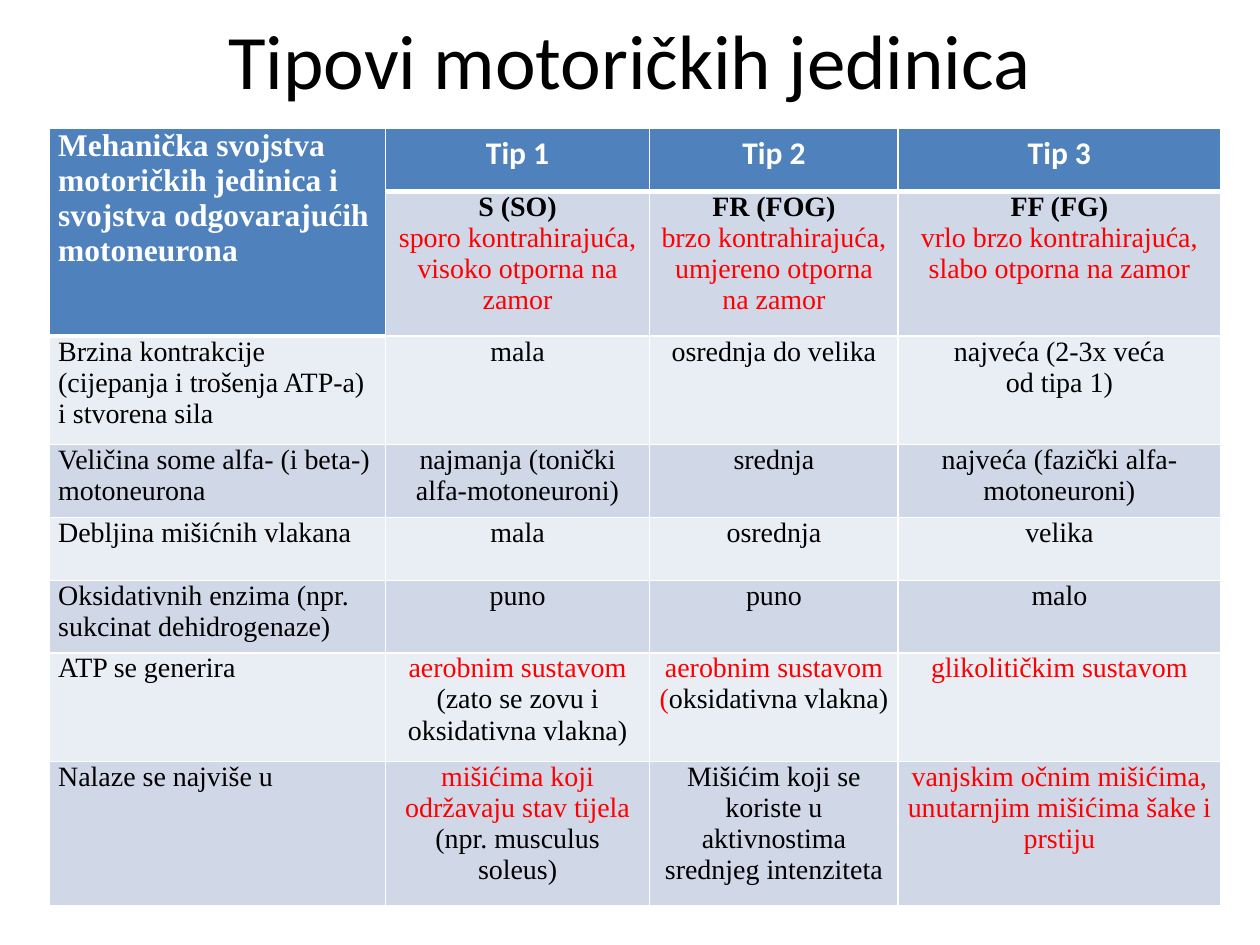
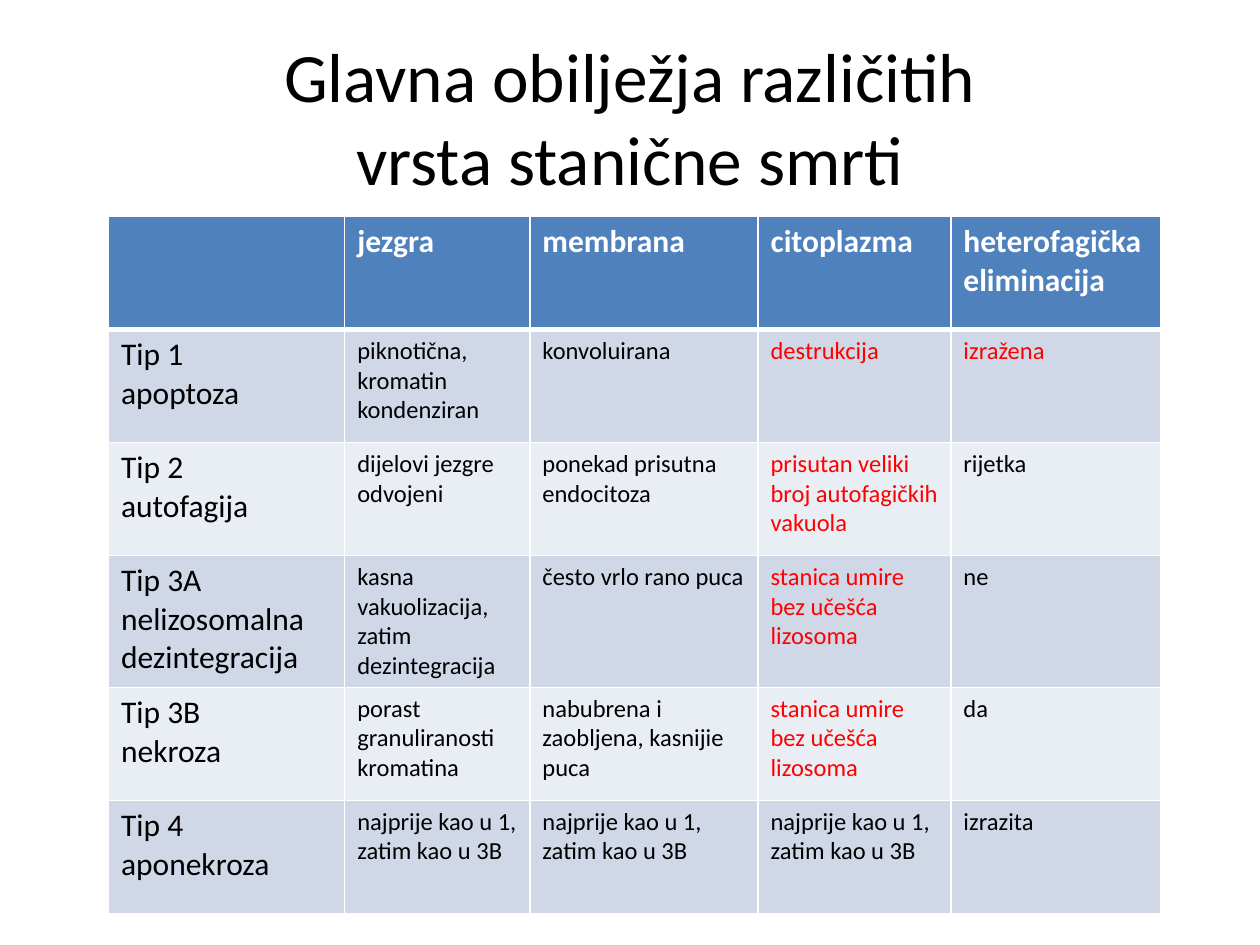
from dataclasses import dataclass

from lxml.etree import SubElement, Element
from pptx import Presentation
from pptx.dml.color import RGBColor
from pptx.enum.text import MSO_ANCHOR, MSO_AUTO_SIZE, PP_ALIGN as Align
from pptx.oxml.ns import qn
from pptx.util import Pt

# Shared look
HEADER, BAND_DARK, BAND_LIGHT = "4F81BD", "D0D8E8", "E9EDF4"
WHITE, BLACK, RED = "FFFFFF", "000000", "FF0000"
SANS, SERIF = "Calibri", "Times New Roman"
THIN, THICK = 1, 3
TITLE_ONLY = 5
TITLE_LEFT, TITLE_WIDTH, TITLE_HEIGHT = 36, 648, 90


@dataclass(frozen=True)
class CellStyle:
    size: float
    font: str = SANS
    color: str = BLACK
    bold: bool = False
    align: Align = Align.LEFT
    margins: tuple[float, float] = (7.2, 3.6)  # sides, top and bottom


@dataclass(frozen=True)
class TableSlide:
    title: str
    title_top: float
    title_size: float
    left: float
    top: float
    columns: list[float]
    heights: list[float]
    rows: list[list[str]]
    corner: CellStyle  # top left cell
    header: CellStyle
    label: CellStyle  # first column
    body: CellStyle
    corner_span: int = 1


def rgb(color: str) -> RGBColor:
    return RGBColor.from_string(color)


def write(frame, text: str, *, size: float, font: str, color: str,
          bold: bool = False, align: Align = Align.LEFT, breaks: bool = False) -> None:
    """Each line is a paragraph (or a line break); *line is bold, |part| is red."""
    paragraph = frame.paragraphs[0]
    for number, line in enumerate(text.split("\n")):
        if number and breaks:
            paragraph.add_line_break()
        elif number:
            paragraph = frame.add_paragraph()
        paragraph.alignment = align
        strong = bold or line.startswith("*")
        for position, part in enumerate(line.removeprefix("*").split("|")):
            if not part:
                continue
            run = paragraph.add_run()
            run.text = part
            run.font.size, run.font.name, run.font.bold = Pt(size), font, strong
            run.font.color.rgb = rgb(RED if position % 2 else color)


def set_borders(cell, top: float, bottom: float) -> None:
    properties = cell._tc.get_or_add_tcPr()
    widths = {"a:lnL": THIN, "a:lnR": THIN, "a:lnT": top, "a:lnB": bottom}
    for position, (side, width) in enumerate(widths.items()):
        line = Element(qn(side), w=str(Pt(width)))
        fill = SubElement(line, qn("a:solidFill"))
        SubElement(fill, qn("a:srgbClr"), val=WHITE)
        properties.insert(position, line)


def add_title(slide, content: TableSlide) -> None:
    title = slide.shapes.title
    title.left, title.top = Pt(TITLE_LEFT), Pt(content.title_top)
    title.width, title.height = Pt(TITLE_WIDTH), Pt(TITLE_HEIGHT)
    frame = title.text_frame
    frame.auto_size, frame.word_wrap = MSO_AUTO_SIZE.NONE, True
    frame.vertical_anchor = MSO_ANCHOR.MIDDLE
    write(frame, content.title, size=content.title_size, font=SANS,
          color=BLACK, align=Align.CENTER, breaks=True)


def style_of(content: TableSlide, row: int, column: int) -> CellStyle:
    if row == 0:
        return content.header if column else content.corner
    return content.body if column else content.label


def add_table(slide, content: TableSlide) -> None:
    table = slide.shapes.add_table(
        len(content.heights), len(content.columns), Pt(content.left), Pt(content.top),
        Pt(sum(content.columns)), Pt(sum(content.heights))).table
    table.horz_banding = False
    for column, width in zip(table.columns, content.columns):
        column.width = Pt(width)
    for row, height in zip(table.rows, content.heights):
        row.height = Pt(height)
    if content.corner_span > 1:
        table.cell(0, 0).merge(table.cell(content.corner_span - 1, 0))

    for r, texts in enumerate(content.rows):
        for c, text in enumerate(texts):
            cell = table.cell(r, c)
            style = style_of(content, r, c)
            header_rows = 1 if c else content.corner_span
            cell.margin_left = cell.margin_right = Pt(style.margins[0])
            cell.margin_top = cell.margin_bottom = Pt(style.margins[1])
            band = BAND_DARK if r % 2 else BAND_LIGHT
            cell.fill.solid()
            cell.fill.fore_color.rgb = rgb(HEADER if r < header_rows else band)
            under_corner = c == 0 and r == 0 and header_rows > 1
            set_borders(cell, top=THICK if r == header_rows else THIN,
                        bottom=THICK if r == header_rows - 1 or under_corner else THIN)
            if text:
                write(cell.text_frame, text, size=style.size, font=style.font,
                      color=style.color, bold=style.bold, align=style.align)


# Content
TIGHT = (5, 0)
HEADER_LEFT = CellStyle(18, color=WHITE, bold=True)

MOTOR_UNITS = TableSlide(
    title="Tipovi motoričkih jedinica", title_top=-11.5, title_size=44,
    left=28.3, top=73.5,
    columns=[192, 151, 142, 184.3],
    heights=[36, 82.6, 62, 41.5, 36, 41.5, 62, 82.6],
    corner=CellStyle(18, SERIF, WHITE, True, margins=TIGHT),
    header=CellStyle(18, SANS, WHITE, True, Align.CENTER),
    label=CellStyle(16, SERIF, margins=TIGHT),
    body=CellStyle(16, SERIF, align=Align.CENTER, margins=TIGHT),
    corner_span=2,
    rows=[
        ["Mehanička svojstva motoričkih jedinica i svojstva odgovarajućih motoneurona",
         "Tip 1", "Tip 2", "Tip 3"],
        ["",
         "*S (SO)\n|sporo kontrahirajuća, visoko otporna na zamor|",
         "*FR (FOG)\n|brzo kontrahirajuća, umjereno otporna na zamor|",
         "*FF (FG)\n|vrlo brzo kontrahirajuća, slabo otporna na zamor|"],
        ["Brzina kontrakcije (cijepanja i trošenja ATP-a) i stvorena sila",
         "mala", "osrednja do velika", "najveća (2-3x veća\nod tipa 1)"],
        ["Veličina some alfa- (i beta-) motoneurona",
         "najmanja (tonički alfa-motoneuroni)", "srednja",
         "najveća (fazički alfa-motoneuroni)"],
        ["Debljina mišićnih vlakana", "mala", "osrednja", "velika"],
        ["Oksidativnih enzima (npr. sukcinat dehidrogenaze)", "puno", "puno", "malo"],
        ["ATP se generira",
         "|aerobnim sustavom| (zato se zovu i oksidativna vlakna)",
         "|aerobnim sustavom|\n|(|oksidativna vlakna)",
         "|glikolitičkim sustavom|"],
        ["Nalaze se najviše u",
         "|mišićima koji održavaju stav tijela |(npr. musculus soleus)",
         "Mišićim koji se koriste u aktivnostima srednjeg intenziteta",
         "|vanjskim očnim mišićima, unutarnjim mišićima šake i prstiju|"],
    ])

WITHOUT_LYSOSOMES = "|stanica umire bez učešća lizosoma|"
FIRST_1_THEN_3B = "najprije kao u 1, zatim kao u 3B"

CELL_DEATH = TableSlide(
    title="Glavna obilježja različitih\nvrsta stanične smrti", title_top=21.6, title_size=39.6,
    left=62, top=123.8,
    columns=[135, 105.8, 130.4, 110.2, 120.2],
    heights=[64.6] * 6,
    corner=HEADER_LEFT, header=HEADER_LEFT, label=CellStyle(18), body=CellStyle(14),
    rows=[
        ["", "jezgra", "membrana", "citoplazma", "heterofagička eliminacija"],
        ["Tip 1\napoptoza", "piknotična,\nkromatin kondenziran", "konvoluirana",
         "|destrukcija|", "|izražena|"],
        ["Tip 2\nautofagija", "dijelovi jezgre odvojeni", "ponekad prisutna endocitoza",
         "|prisutan veliki broj autofagičkih vakuola|", "rijetka"],
        ["Tip 3A\nnelizosomalna\ndezintegracija",
         "kasna vakuolizacija, zatim dezintegracija", "često vrlo rano puca",
         WITHOUT_LYSOSOMES, "ne"],
        ["Tip 3B\nnekroza", "porast granuliranosti kromatina",
         "nabubrena i zaobljena, kasnijie puca", WITHOUT_LYSOSOMES, "da"],
        ["Tip 4\naponekroza", *[FIRST_1_THEN_3B] * 3, "izrazita"],
    ])


def main() -> None:
    presentation = Presentation()
    presentation.slide_width, presentation.slide_height = Pt(720), Pt(540)
    for content in (MOTOR_UNITS, CELL_DEATH):
        slide = presentation.slides.add_slide(presentation.slide_layouts[TITLE_ONLY])
        add_title(slide, content)
        add_table(slide, content)
    presentation.save("out.pptx")


if __name__ == "__main__":
    main()
